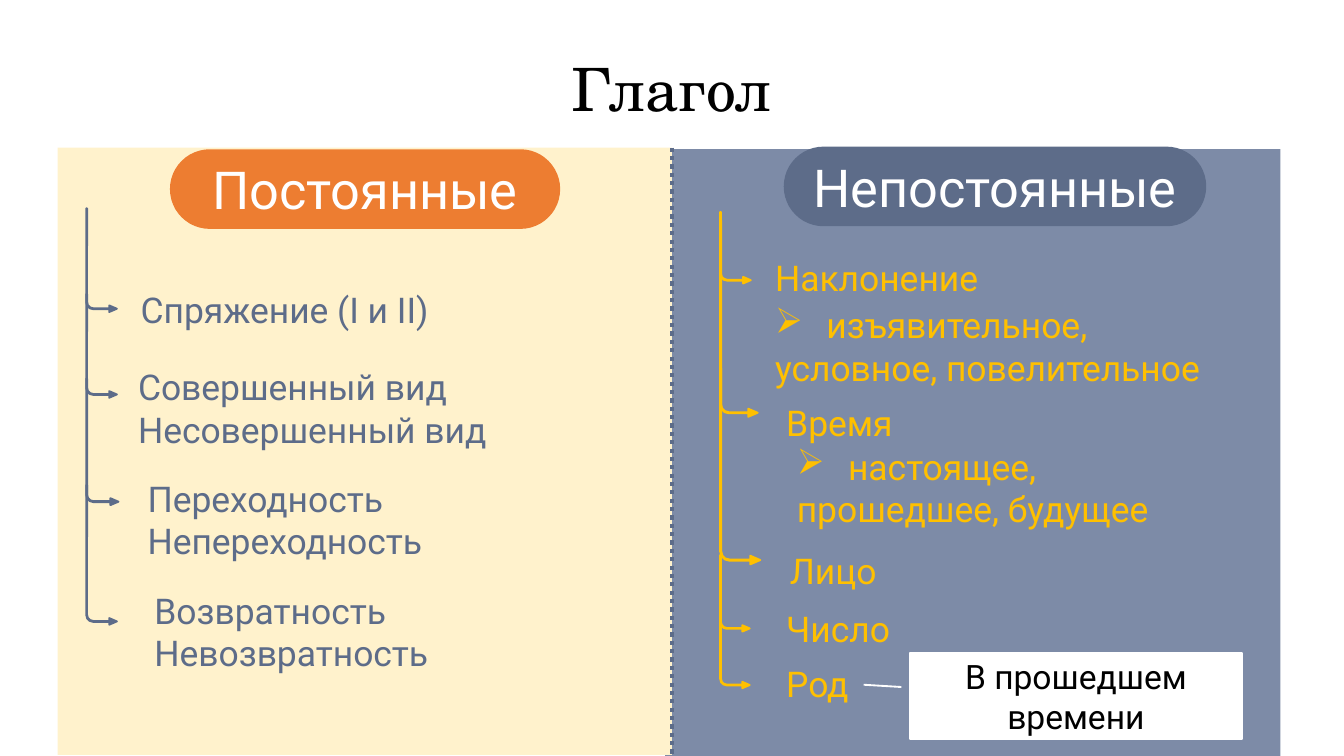
from lxml.etree import SubElement
from pptx import Presentation
from pptx.dml.color import RGBColor
from pptx.enum.dml import MSO_LINE
from pptx.enum.shapes import MSO_CONNECTOR, MSO_SHAPE
from pptx.enum.text import MSO_ANCHOR, PP_ALIGN
from pptx.oxml.ns import qn
from pptx.util import Cm, Pt

COLORS = {
    "cream": "FFF2CC", "haze": "7D8BA7", "slate": "5D6C89", "orange": "ED7D31",
    "gold": "FFC000", "white": "FFFFFF", "black": "000000",
}
BODY = {"name": "Roboto", "size": Pt(19)}
PILL = {"name": "Roboto", "size": Pt(28)}
NOTE = {"name": "Roboto", "size": Pt(18)}
TITLE = {"name": "TeX Gyre Schola", "size": Pt(32), "bold": False}

CONSTANT = [
    ((2.41, 5.26, 10.97, 1.12), ["Спряжение (I и II)"]),
    ((2.36, 7.24, 8.08, 1.4), ["Совершенный вид", "Несовершенный вид"]),
    ((2.54, 9.35, 7.14, 1.4), ["Переходность", "Непереходность"]),
    ((2.67, 11.46, 7.14, 1.4), ["Возвратность", "Невозвратность"]),
]
VARIABLE = [
    ((14.4, 4.6, 6.07, 1.17), ["Наклонение"]),
    ((14.4, 6.3, 10.21, 1.17), ["➢изъявительное,", "условное, повелительное"]),
    ((14.61, 7.34, 6.02, 1.17), ["Время"]),
    ((14.81, 8.97, 11.96, 1.17), ["➢настоящее,", "прошедшее, будущее"]),
    ((14.68, 10.13, 6.02, 1.17), ["Лицо"]),
    ((14.61, 11.23, 6.02, 1.17), ["Число"]),
    ((14.61, 12.27, 6.02, 1.17), ["Род"]),
]
CONSTANT_ARROWS = [(3.94, 0.58, 1.96), (5.56, 0.58, 1.96), (7.16, 0.61, 2.39), (9.17, 0.58, 2.64)]
VARIABLE_ARROWS = [(4.01, 0.58, 1.35), (4.17, 0.71, 3.71), (6.96, 0.76, 3.71),
                   (10.49, 0.56, 1.45), (11.56, 0.56, 1.45)]


def rgb(color):
    """Return the named colour."""
    return RGBColor.from_string(COLORS[color])


def add_bullet(p, char):
    """Give a paragraph a hanging bullet."""
    pPr = p._p.get_or_add_pPr()
    pPr.set("marL", str(Cm(0.97)))
    pPr.set("indent", str(-Cm(0.97)))
    SubElement(pPr, qn("a:buChar")).set("char", char)


def write(tf, lines, fmt, color, align=PP_ALIGN.LEFT, anchor=MSO_ANCHOR.BOTTOM):
    """Fill a text frame with one paragraph per line."""
    tf.word_wrap = True
    tf.vertical_anchor = anchor
    for i, line in enumerate(lines):
        p = tf.add_paragraph() if i else tf.paragraphs[0]
        p.alignment = align
        if line.startswith("➢"):
            add_bullet(p, "➢")
        r = p.add_run()
        r.text = line.lstrip("➢")
        for key, value in fmt.items():
            setattr(r.font, key, value)
        r.font.color.rgb = rgb(color)


def add_title(s, text):
    """Place and fill the title placeholder."""
    sp = s.shapes.title
    for key, value in {"left": 2.67, "top": 1.07, "width": 20.04, "height": 1.4}.items():
        setattr(sp, key, Cm(value))
    write(sp.text_frame, [text], TITLE, "black", PP_ALIGN.CENTER)


def add_shape(s, kind, box, fill, line=None, adjustments=()):
    """Add a flat preset shape."""
    sp = s.shapes.add_shape(kind, *map(Cm, box))
    sp.shadow.inherit = False
    sp.fill.solid()
    sp.fill.fore_color.rgb = rgb(fill)
    if line:
        sp.line.color.rgb = rgb(line)
        sp.line.width = Pt(1)
    else:
        sp.line.fill.background()
    for i, value in enumerate(adjustments):
        sp.adjustments[i] = value
    return sp


def add_pill(s, box, text, color):
    """Add a rounded column heading."""
    sp = add_shape(s, MSO_SHAPE.ROUNDED_RECTANGLE, box, color, color, [0.5])
    write(sp.text_frame, [text], PILL, "white", PP_ALIGN.CENTER, MSO_ANCHOR.MIDDLE)


def add_branches(s, left, arrows, color):
    """Add the bent arrows that branch off one trunk."""
    for top, width, height in arrows:
        sp = add_shape(s, MSO_SHAPE.BENT_ARROW, (left, top, width, height),
                       color, color, [0.03, 0.108, 0.25, 0.231])
        sp._element.spPr.find(qn("a:xfrm")).set("flipV", "1")


def add_items(s, items, color):
    """Add the text boxes of one column."""
    for box, lines in items:
        tf = s.shapes.add_textbox(*map(Cm, box)).text_frame
        write(tf, lines, BODY, color)


def add_divider(s):
    """Add the dotted line between the columns."""
    cn = s.shapes.add_connector(MSO_CONNECTOR.STRAIGHT, Cm(12.7), Cm(2.79), Cm(12.7), Cm(14.29))
    cn.line.color.rgb = rgb("slate")
    cn.line.width = Pt(2.25)
    cn.line.dash_style = MSO_LINE.ROUND_DOT
    SubElement(cn._element.spPr, qn("a:effectLst"))


def add_callout(s, text):
    """Add the note with its leader line."""
    sp = add_shape(s, MSO_SHAPE.LINE_CALLOUT_1, (17.2, 12.34, 6.27, 1.63),
                   "white", "white", [0.397, -0.026, 0.371, -0.14])
    write(sp.text_frame, [text], NOTE, "black", PP_ALIGN.CENTER, MSO_ANCHOR.MIDDLE)


def main():
    """Build the slide and save it."""
    prs = Presentation()
    prs.slide_width, prs.slide_height = Cm(25.4), Cm(14.29)
    s = prs.slides.add_slide(prs.slide_layouts[5])
    add_title(s, "Глагол")
    add_shape(s, MSO_SHAPE.RECTANGLE, (12.57, 2.82, 11.63, 11.48), "haze")
    add_shape(s, MSO_SHAPE.RECTANGLE, (1.09, 2.79, 11.61, 11.48), "cream")
    add_divider(s)
    add_pill(s, (3.23, 2.84, 7.34, 1.47), "Постоянные", "orange")
    add_pill(s, (14.83, 2.79, 7.95, 1.47), "Непостоянные", "slate")
    add_items(s, CONSTANT, "slate")
    add_branches(s, 1.63, CONSTANT_ARROWS, "slate")
    add_items(s, VARIABLE, "gold")
    add_branches(s, 13.61, VARIABLE_ARROWS, "gold")
    add_callout(s, "В прошедшем времени")
    prs.save("out.pptx")


if __name__ == "__main__":
    main()
